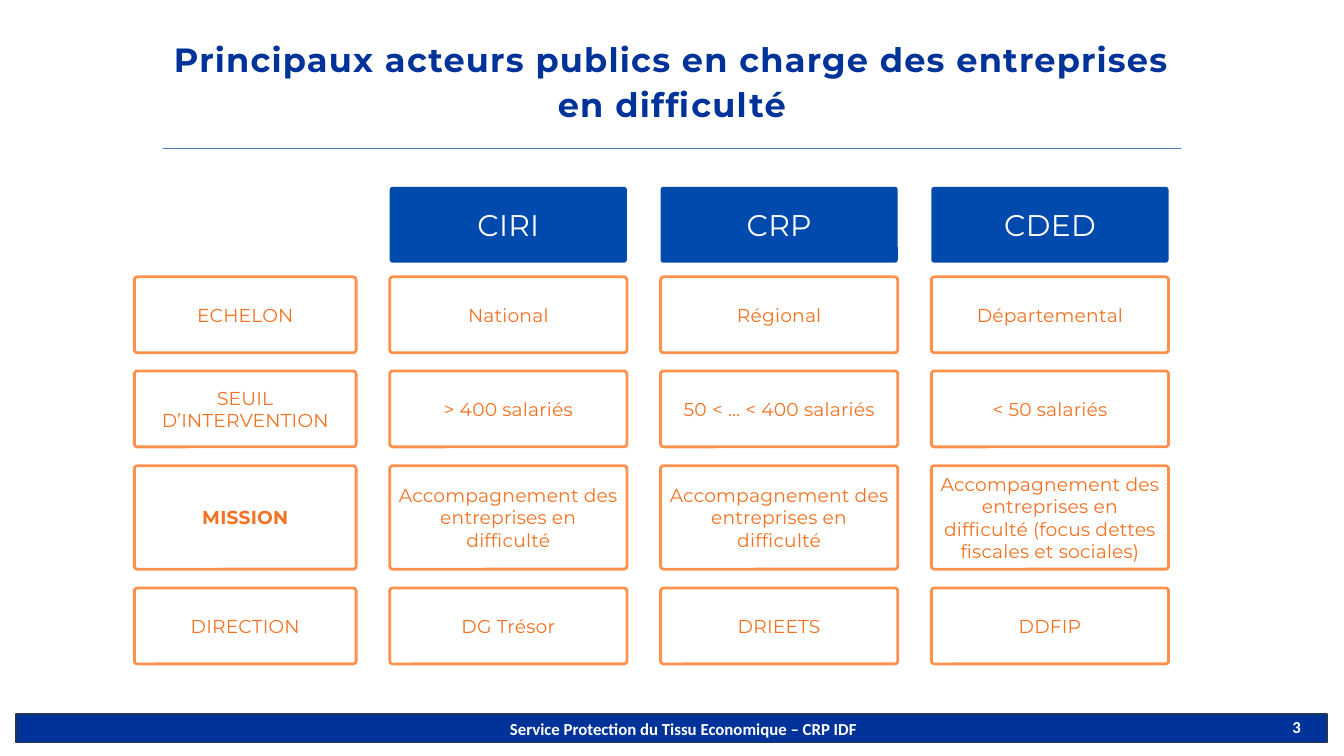
from pptx import Presentation
from pptx.dml.color import RGBColor
from pptx.enum.shapes import MSO_CONNECTOR, MSO_SHAPE
from pptx.enum.text import MSO_ANCHOR, PP_ALIGN
from pptx.oxml.ns import qn
from pptx.util import Inches, Pt
from lxml import etree

# Content
TITLE = "Principaux acteurs publics en charge des entreprises en difficulté"
FOOTER = "Service Protection du Tissu Economique – CRP IDF"
PAGE = "3"
ACTORS = ["CIRI", "CRP", "CDED"]
SUPPORT = "Accompagnement des entreprises en difficulté"
# label, cells, top, height, bold label
ROWS = [
    ("ECHELON", ["National", "Régional", "Départemental"], 4.12, 1.13, False),
    ("SEUIL D’INTERVENTION",
     ["> 400 salariés", "50 < … < 400 salariés", "< 50 salariés"], 5.52, 1.13, False),
    ("MISSION",
     [SUPPORT, SUPPORT, SUPPORT + " (focus dettes fiscales et sociales)"], 6.93, 1.54, True),
    ("DIRECTION", ["DG Trésor", "DRIEETS", "DDFIP"], 8.75, 1.13, False),
]

THEME = {
    "font": "Montserrat", "footer_font": "Calibri",
    "title": "003399", "header": "004AAD", "border": "FF914D", "text": "F37221",
    "white": "FFFFFF", "rule": "4B7EBC", "footer_line": "233953",
    "title_size": 36, "header_size": 32, "cell_size": 20, "footer_size": 18,
}

# Grid
LABEL_LEFT, LABEL_WIDTH = 2, 3.3
COL_LEFT, COL_WIDTH, COL_STEP = 5.8, 3.53, 4.03
HEADER_TOP, HEADER_HEIGHT = 2.78, 1.13
CORNER = 0.045


def rgb(name):
    return RGBColor.from_string(THEME[name])


def style(tf, size, color, font="font", bold=False, spacing=0):
    """Centre the first paragraph and format its run."""
    p = tf.paragraphs[0]
    p.alignment = PP_ALIGN.CENTER
    r = p.runs[0]
    r.font.name = THEME[font]
    r.font.size = Pt(THEME[size])
    r.font.color.rgb = rgb(color)
    r.font.bold = bold
    if spacing:
        r.font._element.set("spc", str(spacing))


def add_box(slide, kind, box, fill, line=None, width=3):
    sp = slide.shapes.add_shape(kind, *map(Inches, box))
    sp.shadow.inherit = False
    sp.fill.solid()
    sp.fill.fore_color.rgb = rgb(fill)
    if line:
        sp.line.color.rgb = rgb(line)
        sp.line.width = Pt(width)
    else:
        sp.line.fill.background()
    return sp


def add_card(slide, text, box, fill, line, size, color, bold=False, spacing=20):
    sp = add_box(slide, MSO_SHAPE.ROUNDED_RECTANGLE, box, fill, line)
    sp.adjustments[0] = CORNER / box[3]
    tf = sp.text_frame
    tf.text = text
    tf.word_wrap = True
    tf.vertical_anchor = MSO_ANCHOR.MIDDLE
    tf.margin_left = tf.margin_right = Inches(0.09)
    style(tf, size, color, bold=bold, spacing=spacing)


def add_footer_text(slide, text, box):
    tf = slide.shapes.add_textbox(*map(Inches, box)).text_frame
    tf.text = text
    tf.word_wrap = True
    style(tf, "footer_size", "white", "footer_font", bold=True)


def main():
    prs = Presentation()
    prs.slide_width, prs.slide_height = Inches(20), Inches(11.25)
    slide = prs.slides.add_slide(prs.slide_layouts[5])

    # Title and rule
    title = slide.shapes.title
    title.left, title.top, title.width, title.height = map(Inches, (2.25, 0.5, 15.5, 1.3))
    tf = title.text_frame
    tf.text = TITLE
    tf.word_wrap = True
    tf.vertical_anchor = MSO_ANCHOR.TOP
    tf.margin_left = tf.margin_right = tf.margin_top = tf.margin_bottom = 0
    tf.paragraphs[0].line_spacing = Pt(48.4)
    style(tf, "title_size", "title", bold=True, spacing=130)

    rule = slide.shapes.add_connector(
        MSO_CONNECTOR.STRAIGHT, *map(Inches, (2.42, 2.21, 17.58, 2.21)))
    rule.line.color.rgb = rgb("rule")
    rule.line.width = Pt(0.75)
    etree.SubElement(rule._element.spPr, qn("a:effectLst"))

    # Column headers
    lefts = [COL_LEFT + i * COL_STEP for i in range(len(ACTORS))]
    for left, actor in zip(lefts, ACTORS):
        add_card(slide, actor, (left, HEADER_TOP, COL_WIDTH, HEADER_HEIGHT),
                 "header", None, "header_size", "white", spacing=30)

    # Rows: label, then one card per actor
    for label, cells, top, height, bold in ROWS:
        add_card(slide, label, (LABEL_LEFT, top, LABEL_WIDTH, height),
                 "white", "border", "cell_size", "text", bold)
        for left, cell in zip(lefts, cells):
            add_card(slide, cell, (left, top, COL_WIDTH, height),
                     "white", "border", "cell_size", "text")

    # Footer
    add_box(slide, MSO_SHAPE.RECTANGLE, (0.24, 10.63, 19.51, 0.42), "title", "footer_line", 2)
    add_footer_text(slide, FOOTER, (4.72, 10.64, 10.9, 0.4))
    add_footer_text(slide, PAGE, (18.83, 10.61, 0.93, 0.42))

    prs.save("out.pptx")


if __name__ == "__main__":
    main()
